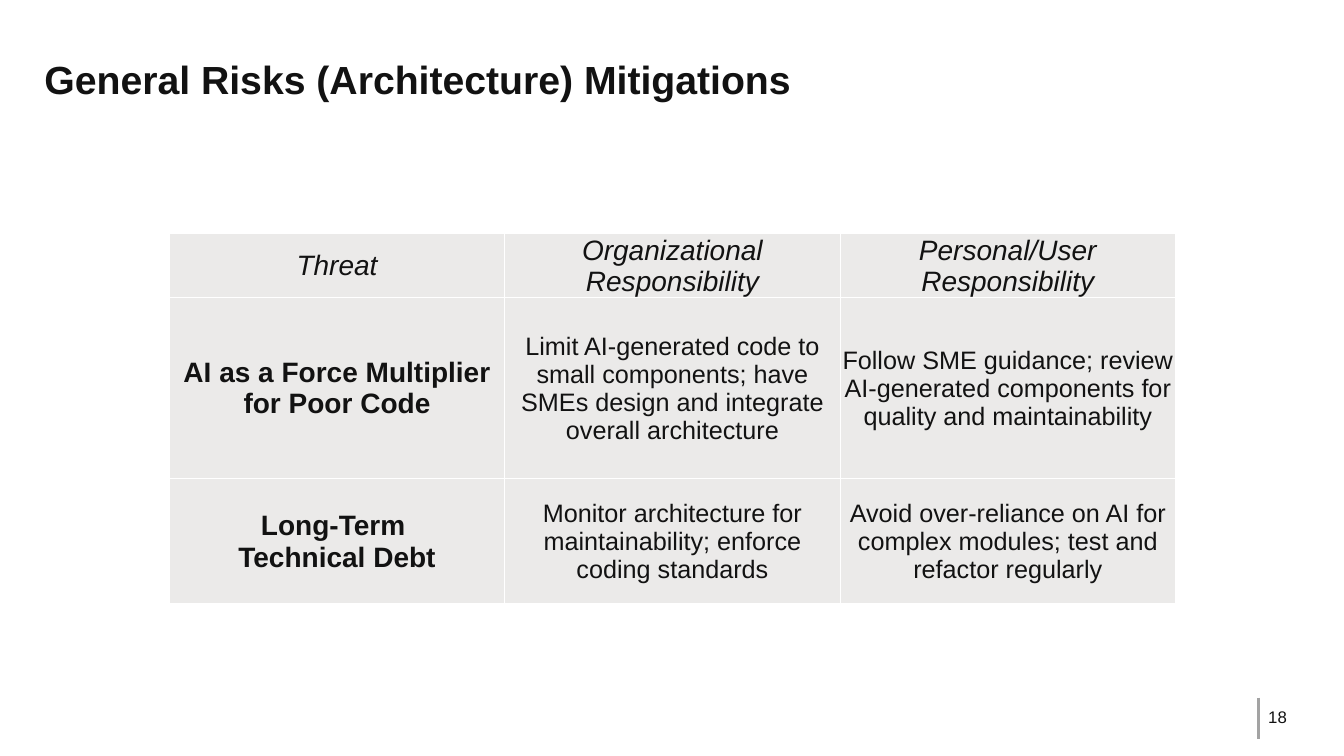
import pptx
import pptx.util
import pptx.dml.color
import pptx.enum.shapes
import pptx.enum.text
import pptx.oxml
import pptx.oxml.ns
import lxml.etree

Inches = pptx.util.Inches
Pt = pptx.util.Pt
FONT = "Arial"
INK = "121212"
CELL_FILL = "EBEAE9"
RULE_GREY = "A3A3A3"
BORDER = "FFFFFF"

HEADINGS = ["Threat", "Organizational Responsibility", "Personal/User Responsibility"]
RISKS = [
    ["AI as a Force Multiplier for Poor Code",
     "Limit AI-generated code to small components; have SMEs design and integrate overall architecture",
     "Follow SME guidance; review AI-generated components for quality and maintainability"],
    ["Long-Term \nTechnical Debt",
     "Monitor architecture for maintainability; enforce coding standards",
     "Avoid over-reliance on AI for complex modules; test and refactor regularly"],
]
ROW_HEIGHTS = [0.55, 1.8, 1.24]


def colour(hex_string):
    return pptx.dml.color.RGBColor.from_string(hex_string)


def add_run(paragraph, text, size, bold=False, italic=False):
    run = paragraph.add_run()
    run.text = text
    run.font.name = FONT
    run.font.size = Pt(size)
    run.font.bold = bold
    run.font.italic = italic
    run.font.color.rgb = colour(INK)


def add_title(slide, text, left, top, width, height):
    title = slide.shapes.title
    title.left, title.top = Inches(left), Inches(top)
    title.width, title.height = Inches(width), Inches(height)
    title.text_frame.vertical_anchor = pptx.enum.text.MSO_ANCHOR.MIDDLE
    paragraph = title.text_frame.paragraphs[0]
    paragraph.alignment = pptx.enum.text.PP_ALIGN.LEFT
    add_run(paragraph, text, 28, bold=True)


def add_cell_borders(cell):
    properties = cell._tc.get_or_add_tcPr()
    namespace = pptx.oxml.ns.nsdecls("a")
    for side in ("lnL", "lnR", "lnT", "lnB"):
        properties.append(pptx.oxml.parse_xml(
            f'<a:{side} {namespace} w="{Pt(1)}"><a:solidFill>'
            f'<a:srgbClr val="{BORDER}"/></a:solidFill></a:{side}>'))


def fill_cell(cell, text, size, bold, italic):
    add_cell_borders(cell)
    cell.fill.solid()
    cell.fill.fore_color.rgb = colour(CELL_FILL)
    cell.vertical_anchor = pptx.enum.text.MSO_ANCHOR.MIDDLE
    cell.margin_left = cell.margin_right = cell.margin_top = Inches(0.01)
    cell.margin_bottom = 0
    for index, line in enumerate(text.split("\n")):
        frame = cell.text_frame
        paragraph = frame.add_paragraph() if index else frame.paragraphs[0]
        paragraph.alignment = pptx.enum.text.PP_ALIGN.CENTER
        add_run(paragraph, line, size, bold, italic)


def add_risk_table(slide, left, top, width):
    rows = [HEADINGS] + RISKS
    table = slide.shapes.add_table(
        len(rows), len(HEADINGS), Inches(left), Inches(top),
        Inches(width), Inches(sum(ROW_HEIGHTS))).table
    for row, height in zip(table.rows, ROW_HEIGHTS):
        row.height = Inches(height)
    for row_index, texts in enumerate(rows):
        for column_index, text in enumerate(texts):
            heading = row_index == 0
            threat = column_index == 0 and not heading
            fill_cell(table.cell(row_index, column_index), text,
                      size=20 if heading or threat else 18,
                      bold=threat, italic=heading)


def add_page_number(slide, number, left, top, width, height):
    # Vertical rule at the left edge
    rule = slide.shapes.add_connector(
        pptx.enum.shapes.MSO_CONNECTOR.STRAIGHT,
        Inches(left), Inches(top), Inches(left), Inches(top + height))
    rule.line.color.rgb = colour(RULE_GREY)
    rule.line.width = Pt(2)
    lxml.etree.SubElement(rule._element.spPr, pptx.oxml.ns.qn("a:effectLst"))

    # Number beside the rule
    box = slide.shapes.add_textbox(
        Inches(left), Inches(top + 0.06), Inches(width), Inches(0.27))
    box.text_frame.word_wrap = True
    box.text_frame.vertical_anchor = pptx.enum.text.MSO_ANCHOR.MIDDLE
    add_run(box.text_frame.paragraphs[0], number, 12)


def main():
    presentation = pptx.Presentation()
    presentation.slide_width = Inches(13.33)
    presentation.slide_height = Inches(7.5)
    slide = presentation.slides.add_slide(presentation.slide_layouts[5])
    add_title(slide, "General Risks (Architecture) Mitigations", 0.34, 0.34, 12.65, 0.89)
    add_risk_table(slide, 1.68, 2.32, 9.98)
    add_page_number(slide, "18", 12.48, 6.92, 0.52, 0.41)
    presentation.save("out.pptx")


if __name__ == "__main__":
    main()
